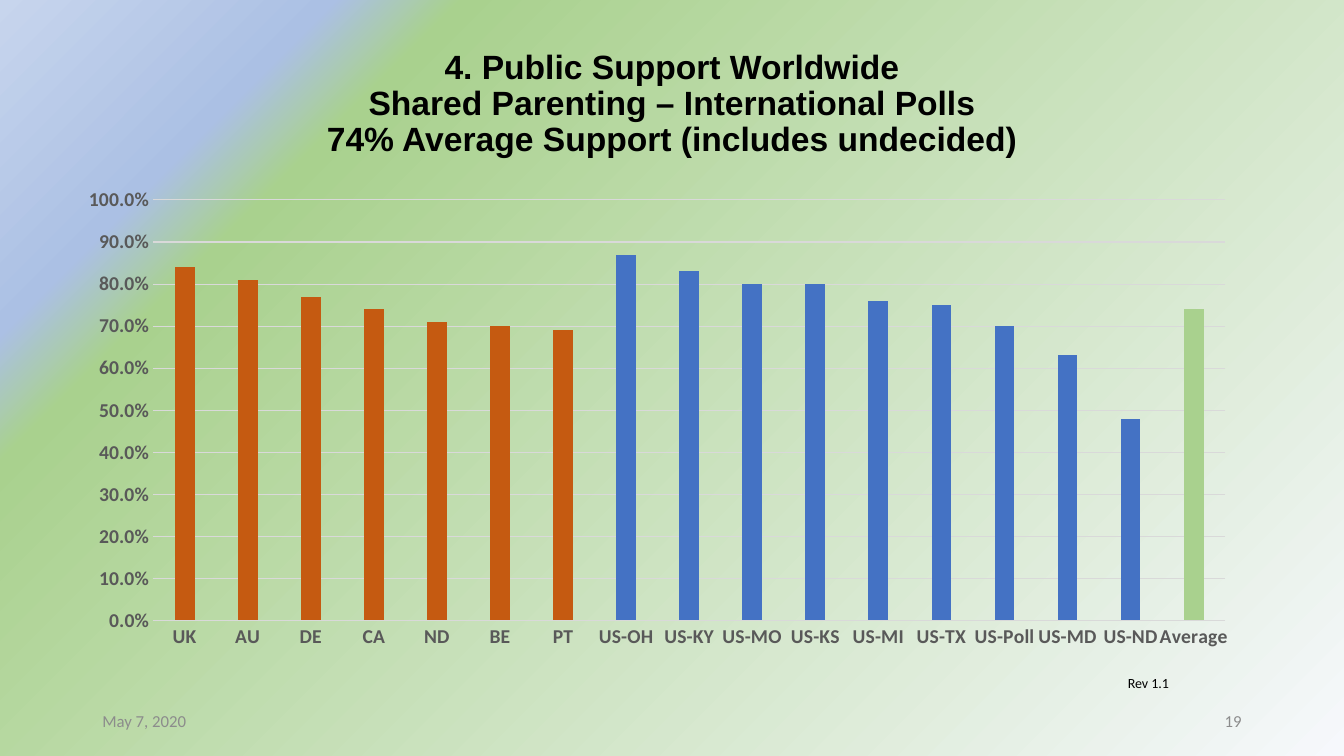
import pptx
import pptx.chart.data
import pptx.dml.color
import pptx.enum.chart
import pptx.enum.text
import pptx.oxml
import pptx.oxml.ns
import pptx.util

Pt = pptx.util.Pt
RGB = pptx.dml.color.RGBColor.from_string
ALIGN = pptx.enum.text.PP_ALIGN
ANCHOR = pptx.enum.text.MSO_ANCHOR

THEME = {
    "title_font": "Arial",
    "body_font": "Calibri",
    "title_size": Pt(24),
    "axis_size": Pt(14),
    "footer_size": Pt(12),
    "note_size": Pt(10),
    "text": RGB("000000"),
    "footer": RGB("8C8C8C"),
    "axis": RGB("595959"),
    "grid": RGB("D9D9D9"),
    "countries": RGB("C55A11"),
    "states": RGB("4472C4"),
    "average": RGB("A9D18E"),
    "background": [(0, "F6F8FC"), (78, "A9D18E"), (84, "ABC0E4"), (100, "C7D5ED")],
}


def style_font(font, name, size, color, bold=False):
    font.name = name
    font.size = size
    font.color.rgb = color
    font.bold = bold


def add_label(slide, text, box, size, color, align, anchor):
    label = slide.shapes.add_textbox(*[Pt(length) for length in box])
    frame = label.text_frame
    frame.word_wrap = True
    frame.vertical_anchor = anchor
    paragraph = frame.paragraphs[0]
    paragraph.text = text
    paragraph.alignment = align
    style_font(paragraph.font, THEME["body_font"], size, color)


presentation = pptx.Presentation()
presentation.slide_width = Pt(960)
presentation.slide_height = Pt(540)
slide = presentation.slides.add_slide(presentation.slide_layouts[5])

stops = "".join(
    f'<a:gs pos="{position * 1000}"><a:srgbClr val="{color}"/></a:gs>'
    for position, color in THEME["background"]
)
background = pptx.oxml.parse_xml(
    f'<p:bg {pptx.oxml.ns.nsdecls("p", "a")}><p:bgPr><a:gradFill rotWithShape="1">'
    f'<a:gsLst>{stops}</a:gsLst>'
    '<a:path path="circle"><a:fillToRect l="100000" t="100000"/></a:path>'
    '</a:gradFill><a:effectLst/></p:bgPr></p:bg>'
)
slide.element.cSld.insert(0, background)

title = slide.shapes.title
title.left, title.top, title.width, title.height = Pt(66), Pt(28.8), Pt(828), Pt(92)
title.text_frame.text = (
    "4. Public Support Worldwide\v"
    "Shared Parenting – International Polls\v"
    "74% Average Support (includes undecided)"
)
title.text_frame.auto_size = pptx.enum.text.MSO_AUTO_SIZE.NONE
title.text_frame.vertical_anchor = ANCHOR.MIDDLE
paragraph = title.text_frame.paragraphs[0]
paragraph.alignment = ALIGN.CENTER
paragraph.line_spacing = 0.9
style_font(paragraph.font, THEME["title_font"], THEME["title_size"], THEME["text"], True)

countries = {"UK": 0.84, "AU": 0.81, "DE": 0.77, "CA": 0.74, "ND": 0.71, "BE": 0.70, "PT": 0.69}
states = {
    "US-OH": 0.87, "US-KY": 0.83, "US-MO": 0.80, "US-KS": 0.80, "US-MI": 0.76,
    "US-TX": 0.75, "US-Poll": 0.70, "US-MD": 0.63, "US-ND": 0.48,
}
polls = {**countries, **states, "Average": 0.74}

chart_data = pptx.chart.data.CategoryChartData(number_format="0.0%")
chart_data.categories = list(polls)
chart_data.add_series("Series 1", list(polls.values()))
chart = slide.shapes.add_chart(
    pptx.enum.chart.XL_CHART_TYPE.COLUMN_CLUSTERED,
    Pt(46.8), Pt(127.4), Pt(847.4), Pt(342.7), chart_data,
).chart
chart.has_legend = False
chart.has_title = False
style_font(chart.font, THEME["body_font"], THEME["note_size"], THEME["text"])

plot = chart.plots[0]
plot.gap_width = 219
plot.overlap = -27
plot.vary_by_categories = False
series = plot.series[0]
series.format.fill.solid()
series.format.fill.fore_color.rgb = THEME["states"]
for index, poll in enumerate(polls):
    if poll not in states:
        fill = series.points[index].format.fill
        fill.solid()
        fill.fore_color.rgb = THEME["countries" if poll in countries else "average"]

value_axis = chart.value_axis
category_axis = chart.category_axis
for axis in (value_axis, category_axis):
    axis.major_tick_mark = pptx.enum.chart.XL_TICK_MARK.NONE
    axis.minor_tick_mark = pptx.enum.chart.XL_TICK_MARK.NONE
    style_font(axis.tick_labels.font, THEME["body_font"], THEME["axis_size"], THEME["axis"], True)

value_axis.minimum_scale = 0
value_axis.maximum_scale = 1
value_axis.major_unit = 0.1
value_axis.tick_labels.number_format = "0.0%"
value_axis.tick_labels.number_format_is_linked = False
value_axis.format.line.fill.background()
for line in (value_axis.major_gridlines.format.line, category_axis.format.line):
    line.color.rgb = THEME["grid"]
    line.width = Pt(0.75)

add_label(slide, "May 7, 2020", (66, 500.5, 216, 28.8),
          THEME["footer_size"], THEME["footer"], ALIGN.LEFT, ANCHOR.MIDDLE)
add_label(slide, "19", (678, 500.5, 216, 28.8),
          THEME["footer_size"], THEME["footer"], ALIGN.RIGHT, ANCHOR.MIDDLE)
add_label(slide, "Rev 1.1", (798.5, 478, 80, 19.4),
          THEME["note_size"], THEME["text"], ALIGN.LEFT, ANCHOR.TOP)

presentation.save("out.pptx")
